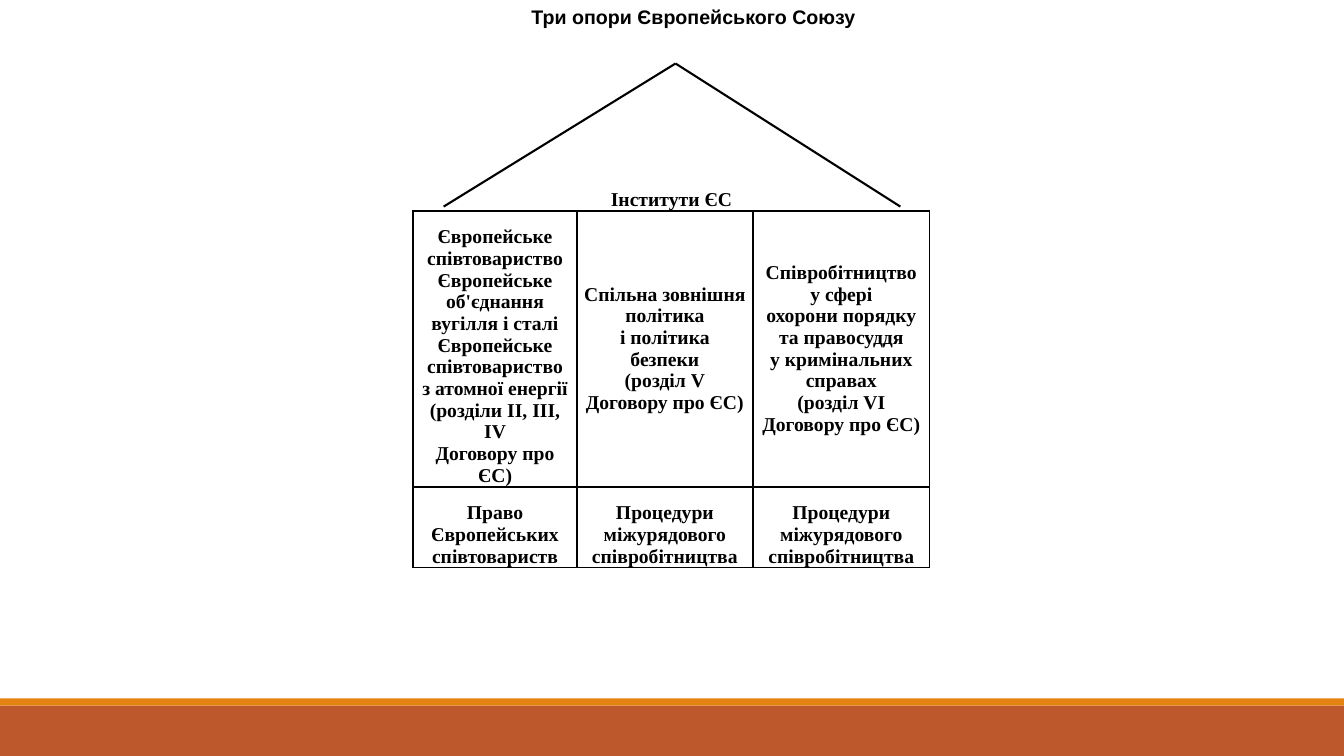
from lxml import etree
from pptx import Presentation
from pptx.dml.color import RGBColor
from pptx.enum.shapes import MSO_CONNECTOR, MSO_SHAPE
from pptx.enum.text import MSO_ANCHOR, MSO_AUTO_SIZE, PP_ALIGN
from pptx.oxml.ns import qn
from pptx.util import Inches, Pt

STRAIGHT = MSO_CONNECTOR.STRAIGHT
RECTANGLE = MSO_SHAPE.RECTANGLE
MIDDLE, BOTTOM = MSO_ANCHOR.MIDDLE, MSO_ANCHOR.BOTTOM
CENTER = PP_ALIGN.CENTER
NO_AUTOFIT = MSO_AUTO_SIZE.NONE

BLACK = RGBColor(0x00, 0x00, 0x00)
RUST = RGBColor(0xBD, 0x58, 0x2C)
ORANGE = RGBColor(0xE4, 0x83, 0x12)
LINE_WIDTH = Pt(1.5)

SLIDE_WIDTH, SLIDE_HEIGHT = 13.33, 7.5
COLUMN_WIDTHS = [1.62, 1.75, 1.75]
ROW_HEIGHTS = [0.55, 2.74, 0.8]
TOP_GAP = 0.15

TITLE = "Три опори Європейського Союзу"
INSTITUTIONS = ["Інститути ЄС"]
PILLARS = [
    ["Європейське", "співтовариство", "Європейське", "об'єднання",
     "вугілля і сталі", "Європейське", "співтовариство",
     "з атомної енергії", "(розділи II, III, IV", "Договору про ЄС)"],
    ["Спільна зовнішня", "політика", "і політика безпеки",
     "(розділ V", "Договору про ЄС)"],
    ["Співробітництво у сфері", "охорони порядку", "та правосуддя",
     "у кримінальних справах", "(розділ VI", "Договору про ЄС)"],
]
PROCEDURES = ["Процедури", "міжурядового", "співробітництва"]
FOUNDATIONS = [["Право Європейських", "співтовариств"], PROCEDURES, PROCEDURES]


def write_lines(frame, lines, font_name):
    """Write each line as a centred bold paragraph."""
    for index, line in enumerate(lines):
        paragraph = frame.paragraphs[0] if index == 0 else frame.add_paragraph()
        paragraph.alignment = CENTER
        run = paragraph.add_run()
        run.text = line
        run.font.name = font_name
        run.font.size = Pt(14)
        run.font.bold = True
        run.font.color.rgb = BLACK


def set_borders(cell, visible_sides):
    properties = cell._tc.get_or_add_tcPr()
    for side in "LRTB":
        border = etree.SubElement(properties, qn(f"a:ln{side}"), w=str(LINE_WIDTH))
        if side in visible_sides:
            fill = etree.SubElement(border, qn("a:solidFill"))
            etree.SubElement(fill, qn("a:srgbClr"), val=str(BLACK))
        else:
            etree.SubElement(border, qn("a:noFill"))


def add_footer_bars(slide, left, top, width, height):
    stripe = 0.07
    for color, offset, thickness in [(RUST, stripe, height - stripe),
                                     (ORANGE, 0, stripe)]:
        bar = slide.shapes.add_shape(RECTANGLE, Inches(left), Inches(top + offset),
                                     Inches(width), Inches(thickness))
        bar.shadow.inherit = False
        bar.fill.solid()
        bar.fill.fore_color.rgb = color
        bar.line.fill.background()


def add_title(slide, left, top, width, height):
    title = slide.shapes.title
    title.left, title.top = Inches(left), Inches(top)
    title.width, title.height = Inches(width), Inches(height)
    frame = title.text_frame
    frame.word_wrap = True
    frame.auto_size = NO_AUTOFIT
    frame.vertical_anchor = MIDDLE
    frame.margin_top = frame.margin_bottom = 0
    write_lines(frame, [TITLE], "Arial")


def add_pillars_table(slide, left, top):
    table = slide.shapes.add_table(
        len(ROW_HEIGHTS), len(COLUMN_WIDTHS), Inches(left), Inches(top),
        Inches(sum(COLUMN_WIDTHS)), Inches(sum(ROW_HEIGHTS))).table
    table.first_row = table.horz_banding = False
    for column, width in zip(table.columns, COLUMN_WIDTHS):
        column.width = Inches(width)
    for row, height in zip(table.rows, ROW_HEIGHTS):
        row.height = Inches(height)

    for row_index, row in enumerate(table.rows):
        for cell in row.cells:
            set_borders(cell, "B" if row_index == 0 else "LRTB")
            cell.fill.background()
            cell.margin_left = cell.margin_right = Inches(0.07)
            cell.margin_top = cell.margin_bottom = 0
            cell.vertical_anchor = MIDDLE

    institutions = table.cell(0, 0)
    institutions.merge(table.cell(0, len(COLUMN_WIDTHS) - 1))
    institutions.vertical_anchor = BOTTOM
    write_lines(institutions.text_frame, INSTITUTIONS, "Times New Roman")

    for row_index, texts in enumerate([PILLARS, FOUNDATIONS], start=1):
        for column_index, lines in enumerate(texts):
            cell = table.cell(row_index, column_index)
            if texts is FOUNDATIONS or column_index == 0:
                cell.margin_top = Inches(TOP_GAP)
            write_lines(cell.text_frame, lines, "Times New Roman")


def add_roof(slide, left, top, width, height):
    apex = left + 2.3
    eaves = top + height
    for start, end in [((left, eaves), (apex, top)),
                       ((apex, top), (left + width, eaves))]:
        slope = slide.shapes.add_connector(
            STRAIGHT, *(Inches(value) for value in start + end))
        slope.line.color.rgb = BLACK
        slope.line.width = LINE_WIDTH
        etree.SubElement(slope._element.spPr, qn("a:effectLst"))


def main():
    presentation = Presentation()
    presentation.slide_width = Inches(SLIDE_WIDTH)
    presentation.slide_height = Inches(SLIDE_HEIGHT)
    slide = presentation.slides.add_slide(presentation.slide_layouts[5])
    add_footer_bars(slide, 0, 6.93, SLIDE_WIDTH, 0.57)
    add_pillars_table(slide, 4.1, 1.54)
    add_title(slide, 4.88, 0, 4, 0.34)
    add_roof(slide, 4.4, 0.63, 4.53, 1.42)
    presentation.save("out.pptx")


if __name__ == "__main__":
    main()
